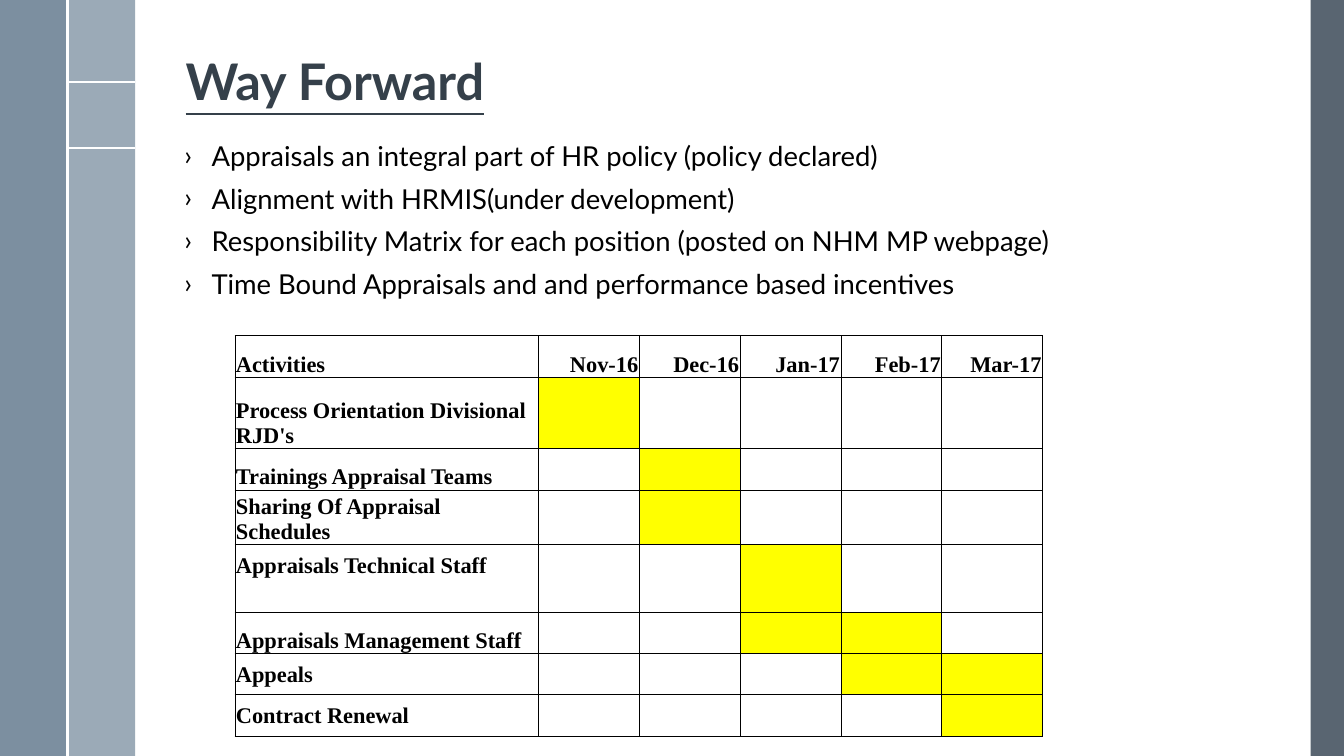
import pptx
import pptx.util
import pptx.dml.color
import pptx.enum.shapes
import pptx.enum.text
import pptx.oxml
import pptx.oxml.ns

Inches = pptx.util.Inches
Pt = pptx.util.Pt
ANCHOR = pptx.enum.text.MSO_ANCHOR
ALIGN = pptx.enum.text.PP_ALIGN

POLICIES = [
    "Appraisals an integral part of HR policy (policy declared)",
    "Alignment with HRMIS(under development)",
    "Responsibility Matrix for each position (posted on NHM MP webpage)",
    "Time Bound Appraisals and and performance based incentives",
]
MONTHS = ["Nov-16", "Dec-16", "Jan-17", "Feb-17", "Mar-17"]
# Activity, row height, anchor, top margin, months in which it runs
SCHEDULE = [
    ("Activities", 0.41, ANCHOR.BOTTOM, 0.01, []),
    ("Process Orientation Divisional RJD's", 0.71, ANCHOR.BOTTOM, 0.01, ["Nov-16"]),
    ("Trainings Appraisal Teams", 0.41, ANCHOR.BOTTOM, 0.01, ["Dec-16"]),
    ("Sharing Of Appraisal Schedules", 0.41, ANCHOR.BOTTOM, 0.01, ["Dec-16"]),
    ("Appraisals Technical Staff", 0.67, ANCHOR.TOP, 0.09, ["Jan-17"]),
    ("Appraisals Management Staff", 0.41, ANCHOR.BOTTOM, 0.01, ["Jan-17", "Feb-17"]),
    ("Appeals", 0.41, ANCHOR.MIDDLE, 0.01, ["Feb-17", "Mar-17"]),
    ("Contract Renewal", 0.41, ANCHOR.MIDDLE, 0.01, ["Mar-17"]),
]
# Pi outline: a pair is a straight step, three pairs are a Bézier step
PI_START = (1.18, 0.98)
PI_STEPS = [
    [(0.9, 0.98)],
    [(0.85, 0.98), (0.83, 1.03), (0.83, 1.04)],
    [(0.83, 1.04), (0.83, 1.05), (0.84, 1.05)],
    [(0.85, 1.05)],
    [(0.85, 1.05), (0.87, 1.01), (0.9, 1.01)],
    [(0.94, 1.01)],
    [(0.94, 1.05), (0.93, 1.22), (0.88, 1.27)],
    [(0.87, 1.28), (0.87, 1.28), (0.88, 1.29)],
    [(0.9, 1.29)],
    [(0.95, 1.23), (0.96, 1.05), (0.97, 1.01)],
    [(1.06, 1.01)],
    [(1.05, 1.22)],
    [(1.05, 1.22), (1.04, 1.26), (1.07, 1.29)],
    [(1.08, 1.3), (1.09, 1.3), (1.1, 1.3)],
    [(1.11, 1.3), (1.11, 1.3), (1.12, 1.3)],
    [(1.17, 1.3), (1.19, 1.23), (1.19, 1.22)],
    [(1.19, 1.22), (1.18, 1.21), (1.18, 1.21)],
    [(1.17, 1.21), (1.16, 1.21), (1.16, 1.22)],
    [(1.16, 1.22), (1.15, 1.27), (1.11, 1.28)],
    [(1.1, 1.28), (1.09, 1.28), (1.08, 1.27)],
    [(1.07, 1.26), (1.07, 1.23), (1.07, 1.22)],
    [(1.09, 1.01)],
    [(1.18, 1.01)],
    [(1.19, 1.01), (1.19, 1), (1.19, 1)],
    [(1.19, 0.99), (1.19, 0.98), (1.18, 0.98)],
]


def rgb(color):
    return pptx.dml.color.RGBColor.from_string(color)


def set_font(font, color, **values):
    font.color.rgb = rgb(color)
    for attribute, value in values.items():
        setattr(font, attribute, value)


def add_xml(parent, body):
    namespace = pptx.oxml.ns.nsdecls("a")
    tag, rest = body.split(" ", 1)
    parent.append(pptx.oxml.parse_xml(f"<{tag} {namespace} {rest}"))


def paint(shape, color, opacity=100):
    shape.shadow.inherit = False
    shape.line.fill.background()
    shape.fill.solid()
    shape.fill.fore_color.rgb = rgb(color)
    if opacity < 100:
        solid = shape.fill._xPr.find(pptx.oxml.ns.qn("a:solidFill"))
        add_xml(solid[0], f'a:alpha val="{opacity * 1000}"/>'.replace("a:alpha", "<a:alpha", 1)[1:])


def add_band(slide, left, width, color, opacity=100):
    band = slide.shapes.add_shape(pptx.enum.shapes.MSO_SHAPE.RECTANGLE,
                                  Inches(left), 0, Inches(width), Inches(7.5))
    paint(band, color, opacity)


def add_rule(slide, *ends):
    rule = slide.shapes.add_connector(pptx.enum.shapes.MSO_CONNECTOR.STRAIGHT,
                                      *(Inches(end) for end in ends))
    rule.line.color.rgb = rgb("FFFFFF")
    rule.line.width = Pt(1.5)
    add_xml(rule._element.spPr, "a:effectLst />")


def bezier(points, steps=6):
    for step in range(1, steps + 1):
        t = step / steps
        weights = ((1 - t) ** 3, 3 * t * (1 - t) ** 2, 3 * t * t * (1 - t), t ** 3)
        yield tuple(sum(w * p[axis] for w, p in zip(weights, points)) for axis in (0, 1))


def add_pi(slide):
    outline = [PI_START]
    for step in PI_STEPS:
        outline += step if len(step) == 1 else list(bezier([outline[-1]] + step))
    builder = slide.shapes.build_freeform(*PI_START, scale=Inches(1))
    builder.add_line_segments(outline[1:], close=True)
    paint(builder.convert_to_shape(), "FFFFFF")


def add_title(slide, text):
    title = slide.shapes.title
    place = dict(left=1.74, top=0.18, width=10.7, height=0.98)
    for attribute, value in place.items():
        setattr(title, attribute, Inches(value))
    title.text_frame.text = text
    title.text_frame.vertical_anchor = ANCHOR.BOTTOM
    paragraph = title.text_frame.paragraphs[0]
    paragraph.alignment = ALIGN.LEFT
    paragraph.line_spacing = 0.9
    set_font(paragraph.runs[0].font, "35404A", name="Lato", size=Pt(36),
             bold=True, underline=True)


def add_bullets(slide, lines):
    frame = slide.shapes.add_textbox(Inches(1.73), Inches(1.42),
                                     Inches(9.85), Inches(1.92)).text_frame
    frame.word_wrap = True
    for index, line in enumerate(lines):
        paragraph = frame.paragraphs[0] if index == 0 else frame.add_paragraph()
        paragraph.line_spacing = 0.7
        paragraph.space_before = Pt(14 if index else 0)
        properties = paragraph._p.get_or_add_pPr()
        properties.set("marL", str(Inches(0.27)))
        properties.set("indent", str(-Inches(0.27)))
        add_xml(properties, 'a:buFont typeface="Lato"/>')
        add_xml(properties, 'a:buChar char="›"/>')
        run = paragraph.add_run()
        run.text = line
        set_font(run.font, "000000", name="Lato", size=Pt(19.6))


def format_cell(cell, text, anchor, top_margin, align, fill):
    margins = dict(margin_left=0.01, margin_right=0.01, margin_top=top_margin, margin_bottom=0)
    for attribute, value in margins.items():
        setattr(cell, attribute, Inches(value))
    cell.vertical_anchor = anchor
    cell.text = text
    paragraph = cell.text_frame.paragraphs[0]
    paragraph.alignment = align
    set_font(paragraph.font, "000000", name="Times New Roman", size=Pt(16), bold=True)
    # Borders come before the fill in the cell properties
    for side in ("lnL", "lnR", "lnT", "lnB"):
        add_xml(cell._tc.get_or_add_tcPr(), f'a:{side} w="{Pt(0.5)}"><a:solidFill>'
                f'<a:srgbClr val="000000"/></a:solidFill></a:{side}>')
    if fill:
        cell.fill.solid()
        cell.fill.fore_color.rgb = rgb(fill)
    else:
        cell.fill.background()


def add_schedule(slide):
    table = slide.shapes.add_table(len(SCHEDULE), len(MONTHS) + 1, Inches(2.33),
                                   Inches(3.33), Inches(8), Inches(3.84)).table
    table.first_row = table.horz_banding = False
    for index, column in enumerate(table.columns):
        column.width = Inches(1 if index else 3.01)
    for row, (activity, height, anchor, top_margin, active) in enumerate(SCHEDULE):
        table.rows[row].height = Inches(height)
        format_cell(table.cell(row, 0), activity, anchor, top_margin, ALIGN.LEFT, None)
        for column, month in enumerate(MONTHS, 1):
            format_cell(table.cell(row, column), "" if row else month, ANCHOR.BOTTOM,
                        0.01, ALIGN.RIGHT, "FFFF00" if month in active else None)


def main():
    deck = pptx.Presentation()
    deck.slide_width, deck.slide_height = Inches(13.33), Inches(7.5)
    slide = deck.slides.add_slide(deck.slide_layouts[5])
    # Side bands with the pi emblem
    add_band(slide, 13, 0.33, "475562", 90)
    add_band(slide, 0.67, 0.67, "9BAAB7")
    add_band(slide, 0, 0.67, "6A8093", 88)
    for height in (0.81, 1.47):
        add_rule(slide, 0.67, height, 1.34, height)
    add_pi(slide)
    add_rule(slide, 0.67, 0, 0.67, 7.5)
    # Content
    add_title(slide, "Way Forward")
    add_bullets(slide, POLICIES)
    add_schedule(slide)
    deck.save("out.pptx")


if __name__ == "__main__":
    main()
